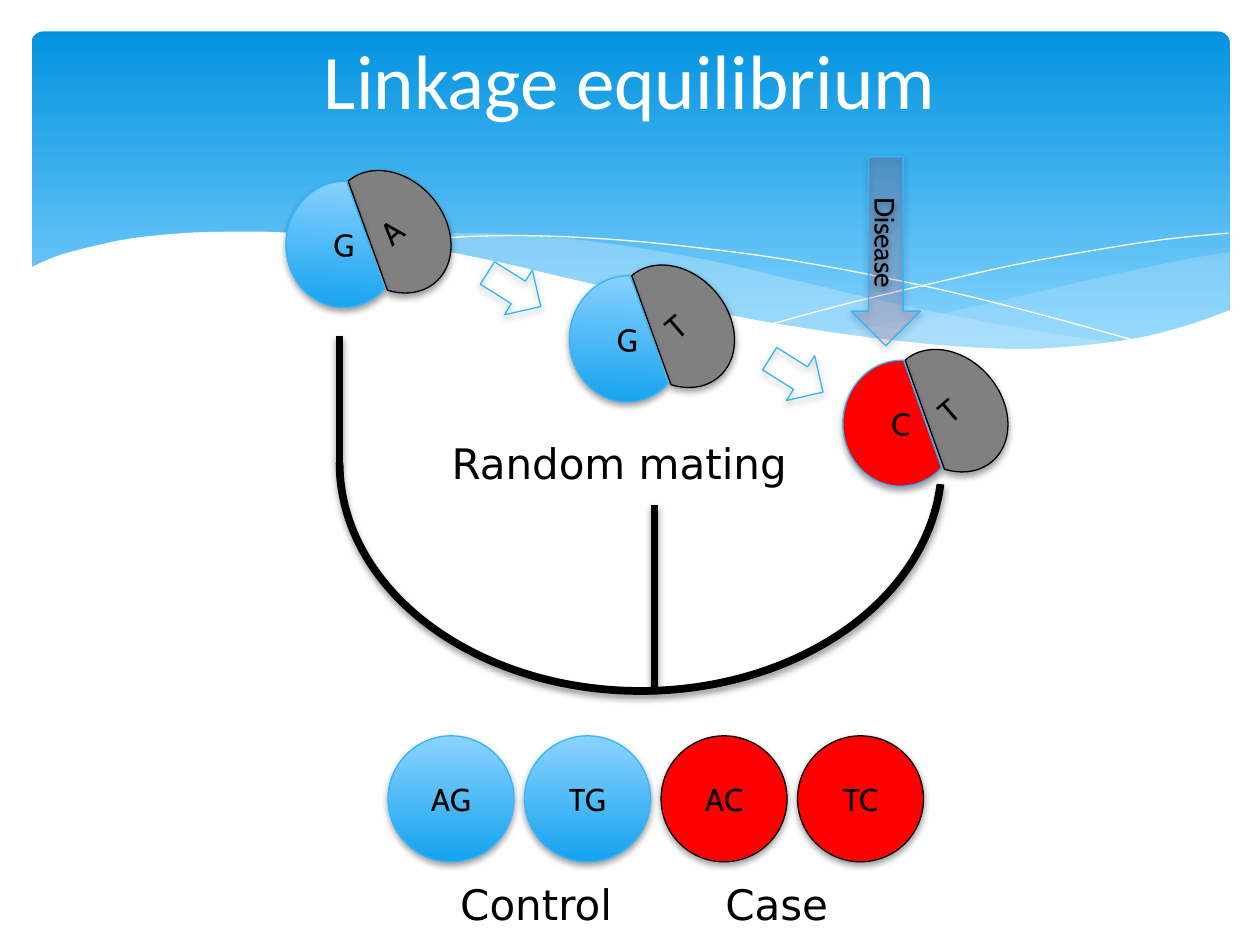
"""Build the linkage equilibrium slide."""
from lxml import etree
from pptx import Presentation
from pptx.dml.color import RGBColor
from pptx.enum.shapes import MSO_SHAPE
from pptx.enum.text import MSO_ANCHOR, PP_ALIGN
from pptx.oxml.ns import qn
from pptx.util import Inches, Pt

CHORD, ARROW = MSO_SHAPE.CHORD, MSO_SHAPE.RIGHT_ARROW
RECT, ROUND = MSO_SHAPE.RECTANGLE, MSO_SHAPE.ROUNDED_RECTANGLE
OVAL, ARC = MSO_SHAPE.OVAL, MSO_SHAPE.BLOCK_ARC
MIDDLE, TOP, CENTER = MSO_ANCHOR.MIDDLE, MSO_ANCHOR.TOP, PP_ALIGN.CENTER

HUES = {
    "black": "000000", "white": "FFFFFF", "gray": "808080", "red": "FF0000",
    "edge": "31B6FD", "mist": "C6E7FC", "light": "8CD3FF", "deep": "14A2EF",
    "sky": "0293E0", "pale": "83D3FE",
}
HUES = {name: RGBColor.from_string(code) for name, code in HUES.items()}
BLUE = ("light", "deep")

deck = Presentation()
deck.slide_width, deck.slide_height = Inches(10), Inches(7.5)
slide = deck.slides.add_slide(deck.slide_layouts[6])
shapes = slide.shapes


def smooth(knots, steps=5):
    """Return points on a Catmull-Rom curve through the knots."""
    ends = [knots[0], *knots, knots[-1]]
    dots = []
    for a, b, c, d in zip(ends, ends[1:], ends[2:], ends[3:]):
        for t in (n / steps for n in range(steps)):
            dots.append(tuple(
                Inches(q + t * (r - p) / 2
                       + t**2 * (2 * p - 5 * q + 4 * r - s) / 2
                       + t**3 * (3 * q - p - 3 * r + s) / 2)
                for p, q, r, s in zip(a, b, c, d)))
    return dots + [tuple(map(Inches, knots[-1]))]


def draw(kind, box, fill=None, line="black", text="", turn=0, size=18, shade=True):
    """Add a preset shape with its fill, line, shadow and label."""
    shape = shapes.add_shape(kind, *map(Inches, box))
    shape.rotation = turn
    if isinstance(fill, tuple):
        shape.fill.gradient()
        shape.fill.gradient_angle = 270
        for stop, name in zip(shape.fill.gradient_stops, fill):
            stop.color.rgb = HUES[name]
    elif fill:
        shape.fill.solid()
        shape.fill.fore_color.rgb = HUES[fill]
    else:
        shape.fill.background()
    if line:
        shape.line.color.rgb = HUES[line]
        shape.line.width = Pt(0.75)
    else:
        shape.line.fill.background()
    shape.shadow.inherit = False
    if shade:
        glow = etree.SubElement(
            shape._element.spPr.find(qn("a:effectLst")), qn("a:outerShdw"),
            blurRad=str(Pt(4)), dist=str(Pt(2)), dir="5400000", rotWithShape="0")
        tint = etree.SubElement(glow, qn("a:srgbClr"), val=str(HUES["black"]))
        etree.SubElement(tint, qn("a:alpha"), val="38000")
    if text:
        shape.text_frame.text = text
        shape.text_frame.vertical_anchor = MIDDLE
        para = shape.text_frame.paragraphs[0]
        para.alignment = CENTER
        para.font.name, para.font.size = "Cabin", Pt(size)
        para.font.color.rgb = HUES["black"]
    return shape


panel = draw(ROUND, (0.25, 0.25, 9.51, 2.7), ("sky", "pale"), None, shade=False)
panel.adjustments[0] = 0.034
panel.fill.gradient_stops[1].position = 0.9

right = [
    [(9.76, 2), (9.35, 2.07), (8.61, 2.23), (7.79, 2.42), (7.06, 2.57), (6.61, 2.65)],
    [(6.61, 2.65), (7.05, 2.71), (7.57, 2.76), (8.03, 2.78), (8.54, 2.76),
     (8.97, 2.7), (9.35, 2.62), (9.76, 2.47)],
]
band = [
    [(8.93, 2.73), (8.37, 2.65), (7.75, 2.54), (7.06, 2.4), (6.29, 2.22),
     (5.69, 2.08), (5.14, 1.98), (4.65, 1.91), (4.2, 1.87), (3.8, 1.85),
     (3.44, 1.86), (2.86, 1.91)],
    [(2.86, 1.91), (3.42, 1.99), (4.04, 2.11), (4.49, 2.22), (5.3, 2.4),
     (6.01, 2.55), (6.65, 2.66), (7.22, 2.74), (7.73, 2.77), (8.18, 2.78),
     (8.57, 2.77), (8.93, 2.73)],
]
fall = [[(3.09, 1.95), (3.53, 1.89), (4.01, 1.87), (4.5, 1.88), (5.1, 1.92),
         (5.82, 2), (6.36, 2.08), (6.95, 2.19), (7.6, 2.33), (8.31, 2.51),
         (9.07, 2.72)]]
rise = [[(6.13, 2.57), (6.72, 2.41), (7.48, 2.23), (8.06, 2.1), (8.66, 1.99),
         (9.24, 1.9), (9.75, 1.85)]]
wave = [
    [(9.77, 2.46), (9.4, 2.59), (8.99, 2.69), (8.5, 2.75), (8.09, 2.77),
     (7.61, 2.75), (7.08, 2.7), (6.48, 2.62), (5.79, 2.5), (5.03, 2.33),
     (4.47, 2.2), (3.91, 2.07), (3.4, 1.97), (2.92, 1.9), (2.5, 1.86),
     (2.11, 1.84), (1.77, 1.84), (1.46, 1.85), (1.06, 1.89), (0.76, 1.95),
     (0.46, 2.03), (0.23, 2.13)],
    [(0.23, 3.29), (9.77, 3.29)],
]
for sides, fill, alpha in [
    (right, "mist", 29), (band, "mist", 40), (fall, None, 100),
    (rise, None, 100), (wave, "white", 100),
]:
    dots = [dot for side in sides for dot in smooth(side)]
    form = shapes.build_freeform(*dots[0])
    form.add_line_segments(dots[1:], close=bool(fill))
    shape = form.convert_to_shape()
    shape.shadow.inherit = False
    if fill:
        shape.fill.solid()
        shape.fill.fore_color.rgb = HUES[fill]
        tint = shape._element.spPr.find(qn("a:solidFill"))[0]
        etree.SubElement(tint, qn("a:alpha"), val=str(alpha * 1000))
        shape.line.fill.background()
    else:
        shape.fill.background()
        shape.line.color.rgb = HUES["white"]
        shape.line.width = Pt(0)

for x, y, left, mate, fill, line in [
    (2.27, 1.44, "G", "A", BLUE, "edge"),
    (4.52, 2.19, "G", "T", BLUE, "edge"),
    (6.69, 2.86, "C", "T", "red", "edge"),
]:
    half = draw(CHORD, (x + 0.42, y - 0.13, 0.84, 1.06), "gray", text=mate, turn=319.2)
    half._element.spPr.xfrm.set("flipH", "1")
    draw(CHORD, (x, y, 0.92, 1), fill, line, left, 2.5)

for x, y in [(3.83, 2.09), (6.07, 2.77)]:
    draw(ARROW, (x, y, 0.5, 0.42), line="edge", turn=32.2)

arc = draw(ARC, (2.67, 1.84, 4.83, 3.67), "black")
arc._element.spPr.xfrm.set("flipV", "1")
for i, value in enumerate((108, 213.5, 0.014)):
    arc.adjustments[i] = value
draw(RECT, (5.17, 4.01, 0.05, 1.45), "black")
draw(RECT, (2.67, 2.67, 0.05, 1), "black")

for i, pair in enumerate(("AG", "TG", "AC", "TC")):
    fill, line = (BLUE, "edge") if i < 2 else ("red", "black")
    draw(OVAL, (3.08 + i * 3.25 / 3, 5.84, 1, 1), fill, line, pair)

for text, box, size, face, hue, anchor in [
    ("Linkage equilibrium", (0.5, 0, 9, 1.25), 44, "Calibri", "white", MIDDLE),
    ("Random mating", (3.08, 3.42, 3.67, 0.5), 24, "DejaVu Sans", "black", TOP),
    ("Control", (2.92, 6.92, 2.67, 0.4), 24, "DejaVu Sans", "black", TOP),
    ("Case", (4.83, 6.92, 2.67, 0.4), 24, "DejaVu Sans", "black", TOP),
]:
    frame = shapes.add_textbox(*map(Inches, box)).text_frame
    frame.word_wrap = True
    frame.vertical_anchor = anchor
    frame.text = text
    para = frame.paragraphs[0]
    para.alignment = CENTER
    para.font.name, para.font.size = face, Pt(size)
    para.font.color.rgb = HUES[hue]

cause = draw(ARROW, (6.28, 1.72, 1.5, 0.55), "red", "edge", "Disease", 90, 16)
tint = cause._element.spPr.find(qn("a:solidFill"))[0]
etree.SubElement(tint, qn("a:alpha"), val="12000")

deck.save("out.pptx")
